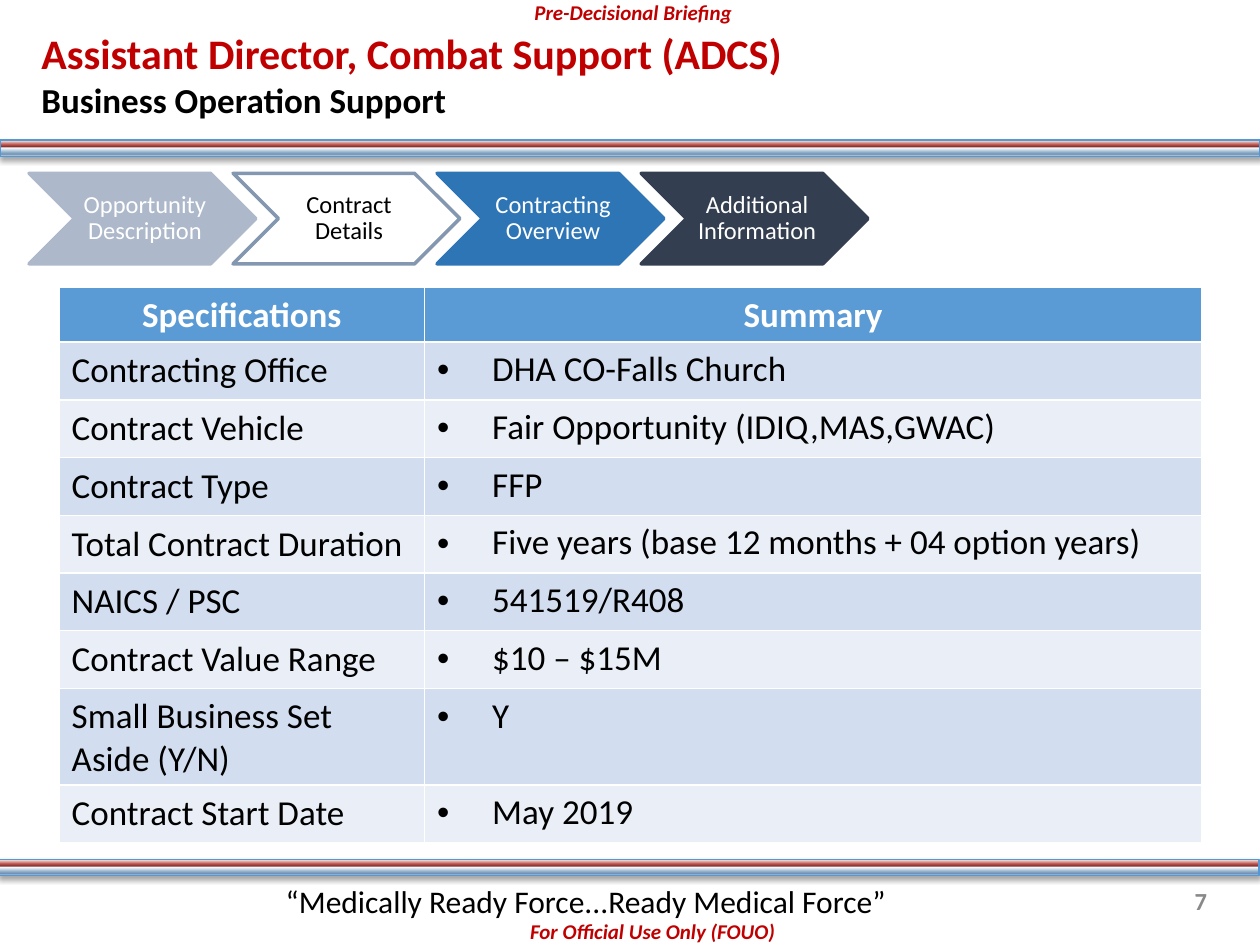
from lxml import etree
from pptx import Presentation
from pptx.dml.color import RGBColor
from pptx.enum import shapes, text
from pptx.oxml import parse_xml
from pptx.oxml.ns import nsdecls
from pptx.util import Pt

HUE = {
    "red": "C00000", "black": "000000", "white": "FFFFFF", "grey": "898989",
    "edge": "5698D3", "head": "5B9BD5", "odd": "D2DEEF", "even": "EAEFF7",
    "mist": "ADB9CA", "steel": "8497B0", "blue": "2E75B6", "navy": "333F50",
}
STOPS = [
    (0, "DCEBF5"), (8, "83A7C3"), (13, "768FB9"), (21, "83A7C3"),
    (52, "FFFFFF"), (56, "9C6563"), (58, "80302D"), (71, "C0524E"),
    (94, "EBDAD4"), (100, "55261C"),
]
BARS = [(0, 80), (-0.5, 491)]
MARKS = [
    ("For Official Use Only (FOUO)", (152.5, 521.3, 441, 21.8)),
    ("Pre-Decisional Briefing", (291.6, -3.6, 140.4, 21.8)),
]
STEPS = [
    ("Opportunity Description", "mist", "mist", "white"),
    ("Contract Details", "white", "steel", "black"),
    ("Contracting Overview", "blue", "blue", "white"),
    ("Additional Information", "navy", "navy", "white"),
]
ROWS = [
    ("Specifications", "Summary", 24.5),
    ("Contracting Office", "DHA CO-Falls Church", 33),
    ("Contract Vehicle", "Fair Opportunity (IDIQ,MAS,GWAC)", 33),
    ("Contract Type", "FFP", 33),
    ("Total Contract Duration", "Five years (base 12 months + 04 option years)", 33),
    ("NAICS / PSC", "541519/R408", 33),
    ("Contract Value Range", "$10 – $15M", 33),
    ("Small Business Set Aside (Y/N)", "Y", 42.5),
    ("Contract Start Date", "May 2019", 33),
]
COLS = [208.8, 444.2]

ALIGN = text.PP_ALIGN
MID = text.MSO_ANCHOR.MIDDLE


def rgb(name):
    return RGBColor.from_string(HUE[name])


def write(para, words, size=20, hue="black", bold=False, italic=False, align=None):
    run = para.add_run()
    run.text = words
    font = run.font
    font.name, font.size = "Calibri", Pt(size)
    font.bold, font.italic = bold, italic
    font.color.rgb = rgb(hue)
    if align is not None:
        para.alignment = align


def frame(slide, place, pads=(7.2, 3.6, 7.2, 3.6), anchor=None):
    box = slide.shapes.add_textbox(*map(Pt, place)).text_frame
    box.word_wrap = True
    box.margin_left, box.margin_top, box.margin_right, box.margin_bottom = map(Pt, pads)
    if anchor is not None:
        box.vertical_anchor = anchor
    return box


def shape(slide, kind, place, line, width):
    item = slide.shapes.add_shape(kind, *map(Pt, place))
    item.shadow.inherit = False
    item.line.color.rgb = rgb(line)
    item.line.width = Pt(width)
    return item


def bar(slide, left, top):
    item = shape(slide, shapes.MSO_SHAPE.RECTANGLE, (left, top, 720, 9.4), "edge", 0.75)
    item.fill.gradient()
    props = item.fill._xPr
    grad = props.find("{*}gradFill")
    stops = "".join(
        f'<a:gs pos="{pos * 1000}"><a:srgbClr val="{hue}"/></a:gs>' for pos, hue in STOPS
    )
    props.replace(grad, parse_xml(
        f'<a:gradFill {nsdecls("a")} rotWithShape="1"><a:gsLst>{stops}</a:gsLst>'
        '<a:lin ang="16200000" scaled="0"/></a:gradFill>'
    ))
    props.find("{*}effectLst").append(parse_xml(
        f'<a:outerShdw {nsdecls("a")} blurRad="39370" dist="22860" dir="5400000" '
        'rotWithShape="0"><a:srgbClr val="000000"><a:alpha val="35000"/></a:srgbClr>'
        '</a:outerShdw>'
    ))


def bullet(para, gap):
    props = para._p.get_or_add_pPr()
    props.set("marL", str(Pt(gap)))
    props.set("indent", str(-Pt(gap)))
    for tag, key, val in (("buFont", "typeface", "Arial"), ("buChar", "char", "•")):
        etree.SubElement(props, f"{{{props.nsmap['a']}}}{tag}").set(key, val)


def steps(slide):
    left, top, wide, high, pitch = 16.6, 99, 129.6, 51.8, 116.6
    for num, (words, fill, line, hue) in enumerate(STEPS):
        x = left + num * pitch
        item = shape(slide, shapes.MSO_SHAPE.CHEVRON, (x, top, wide, high), line, 2)
        item.fill.solid()
        item.fill.fore_color.rgb = rgb(fill)
        place = (x + wide * 0.2, top, wide * 0.6, high)
        para = frame(slide, place, (4.3, 1.4, 1.4, 1.4), MID).paragraphs[0]
        para.line_spacing = 0.9
        write(para, words, size=14, hue=hue, align=ALIGN.CENTER)


def grid(slide):
    high = sum(row[2] for row in ROWS)
    table = slide.shapes.add_table(
        len(ROWS), len(COLS), Pt(33.8), Pt(164.2), Pt(sum(COLS)), Pt(high)
    ).table
    for col, wide in zip(table.columns, COLS):
        col.width = Pt(wide)
    for num, (*cells, tall) in enumerate(ROWS):
        table.rows[num].height = Pt(tall)
        for pos, words in enumerate(cells):
            cell = table.cell(num, pos)
            cell.fill.solid()
            cell.fill.fore_color.rgb = rgb("head" if num == 0 else "odd" if num % 2 else "even")
            para = cell.text_frame.paragraphs[0]
            if num == 0 or pos == 0:
                cell.vertical_anchor = MID
            if num == 0:
                write(para, words, hue="white", bold=True, align=ALIGN.CENTER)
                continue
            if pos == 1:
                bullet(para, 31.5)
            write(para, words)


def main():
    deck = Presentation()
    deck.slide_width, deck.slide_height = Pt(720), Pt(540)
    slide = deck.slides.add_slide(deck.slide_layouts[6])
    for left, top in BARS:
        bar(slide, left, top)
    for words, place in MARKS:
        write(frame(slide, place).paragraphs[0], words, size=12, hue="red",
              bold=True, italic=True, align=ALIGN.CENTER)
    title = frame(slide, (16.6, 10, 534.2, 64.8), (7.2, 0, 7.2, 0), MID).paragraphs[0]
    write(title, "Assistant Director, Combat Support (ADCS)", size=24, hue="red", bold=True)
    title.add_line_break()
    write(title, "Business Operation Support", bold=True)
    steps(slide)
    grid(slide)
    motto = frame(slide, (156.2, 500.4, 414, 28.8)).paragraphs[0]
    write(motto, "“Medically Ready Force...Ready Medical Force”", size=18)
    page = frame(slide, (648.7, 500.4, 48.2, 28.8), anchor=MID).paragraphs[0]
    write(page, "7", size=14, hue="grey", bold=True, align=ALIGN.RIGHT)
    deck.save("out.pptx")


if __name__ == "__main__":
    main()
